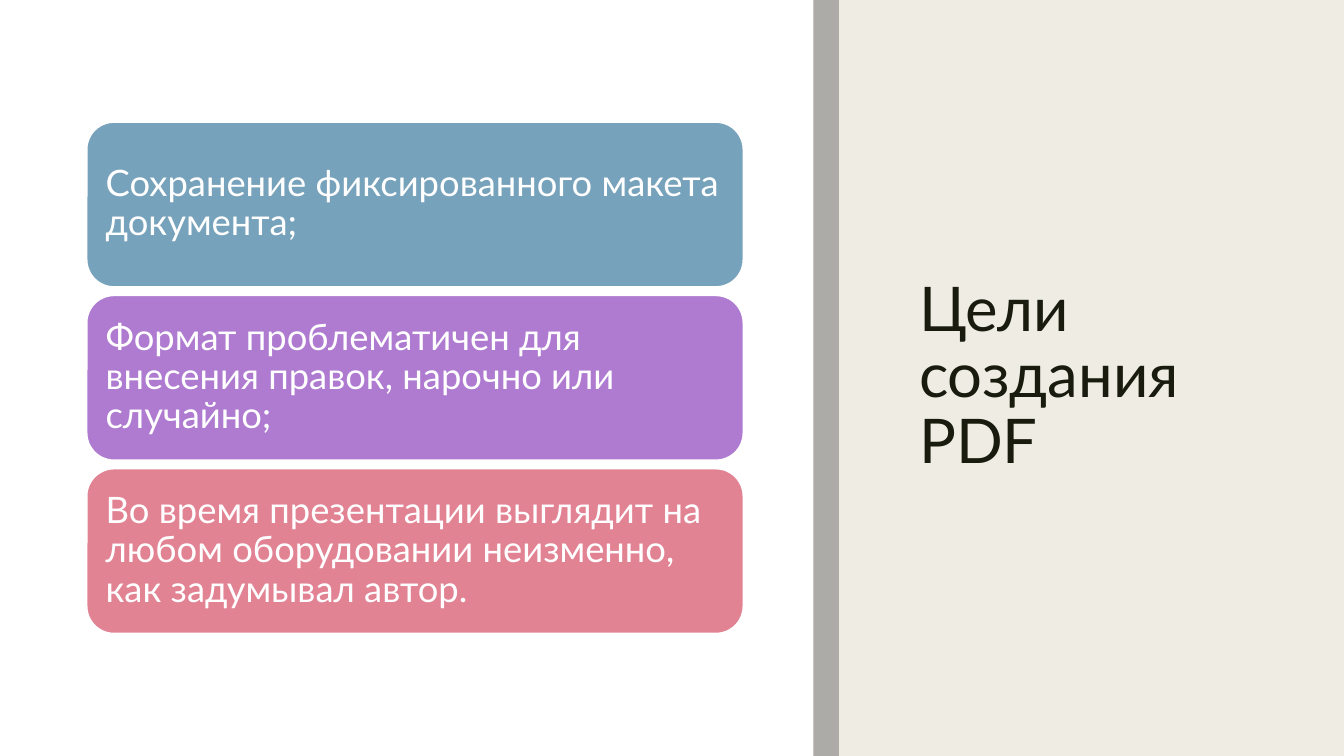
from lxml import etree
from pptx import Presentation
from pptx.dml.color import RGBColor
from pptx.enum.shapes import MSO_SHAPE
from pptx.enum.text import MSO_ANCHOR, PP_ALIGN
from pptx.oxml.ns import qn
from pptx.util import Cm, Pt

RECT = MSO_SHAPE.RECTANGLE
ROUNDED = MSO_SHAPE.ROUNDED_RECTANGLE
MIDDLE = MSO_ANCHOR.MIDDLE
LEFT = PP_ALIGN.LEFT
TITLE_ONLY = 5
FONT = "Lato"

COLORS = {
    "paper": "FFFFFF",
    "sand": "EFEDE3",
    "divider": "808080",
    "ink": "191B0E",
    "blue": "77A2BB",
    "purple": "AE7BD0",
    "rose": "E28394",
}

GOALS = [
    ("Сохранение фиксированного макета документа;", "blue"),
    ("Формат проблематичен для внесения правок, нарочно или случайно;", "purple"),
    ("Во время презентации выглядит на любом оборудовании неизменно, "
     "как задумывал автор.", "rose"),
]


def rgb(name):
    return RGBColor.from_string(COLORS[name])


def add_block(shapes, kind, box, color):
    block = shapes.add_shape(kind, *box)
    block.shadow.inherit = False
    block.fill.solid()
    block.fill.fore_color.rgb = rgb(color)
    block.line.fill.background()
    return block


def write(frame, text, size, color, spacing):
    frame.word_wrap = True
    frame.vertical_anchor = MIDDLE
    paragraph = frame.paragraphs[0]
    paragraph.alignment = LEFT
    paragraph.line_spacing = spacing
    run = paragraph.add_run()
    run.text = text
    run.font.name = FONT
    run.font.size = Pt(size)
    run.font.color.rgb = rgb(color)


def add_backdrop(slide, box):
    left, top, width, height = box
    panel_width, divider_width = Cm(20.5), Cm(0.64)
    add_block(slide.shapes, RECT, box, "sand")
    add_block(slide.shapes, RECT, (left, top, panel_width, height), "paper")
    divider = add_block(
        slide.shapes, RECT,
        (left + panel_width, top, divider_width, height), "divider")
    tint = divider.element.spPr.find(qn("a:solidFill")).find(qn("a:srgbClr"))
    etree.SubElement(tint, qn("a:alpha"), val="60000")


def add_title(slide, box):
    title = slide.shapes.title
    title.left, title.top, title.width, title.height = box
    write(title.text_frame, "Цели создания PDF", 44, "ink", 0.89)
    slide.shapes.element.append(title.element)


def add_goals(slide, box):
    left, top, width, height = box
    gap = Cm(0.2)
    card_height = (height - gap * (len(GOALS) - 1)) // len(GOALS)
    cards = slide.shapes.add_group_shape().shapes
    for index, (goal, color) in enumerate(GOALS):
        card_top = top + index * (card_height + gap)
        card = add_block(
            cards, ROUNDED, (left, card_top, width, card_height), color)
        card.line.color.rgb = rgb("paper")
        card.line.width = Pt(1.5)
        frame = card.text_frame
        frame.margin_left = frame.margin_right = Cm(0.28)
        frame.margin_top = frame.margin_bottom = Cm(0.28)
        write(frame, goal, 26, "paper", 0.9)


def main():
    deck = Presentation()
    deck.slide_width, deck.slide_height = Cm(33.87), Cm(19.05)
    slide = deck.slides.add_slide(deck.slide_layouts[TITLE_ONLY])
    add_backdrop(slide, (0, 0, deck.slide_width, deck.slide_height))
    add_title(slide, (Cm(22.91), Cm(1.78), Cm(9.17), Cm(15.49)))
    add_goals(slide, (Cm(2.18), Cm(3.07), Cm(16.56), Cm(12.9)))
    deck.save("out.pptx")


if __name__ == "__main__":
    main()
